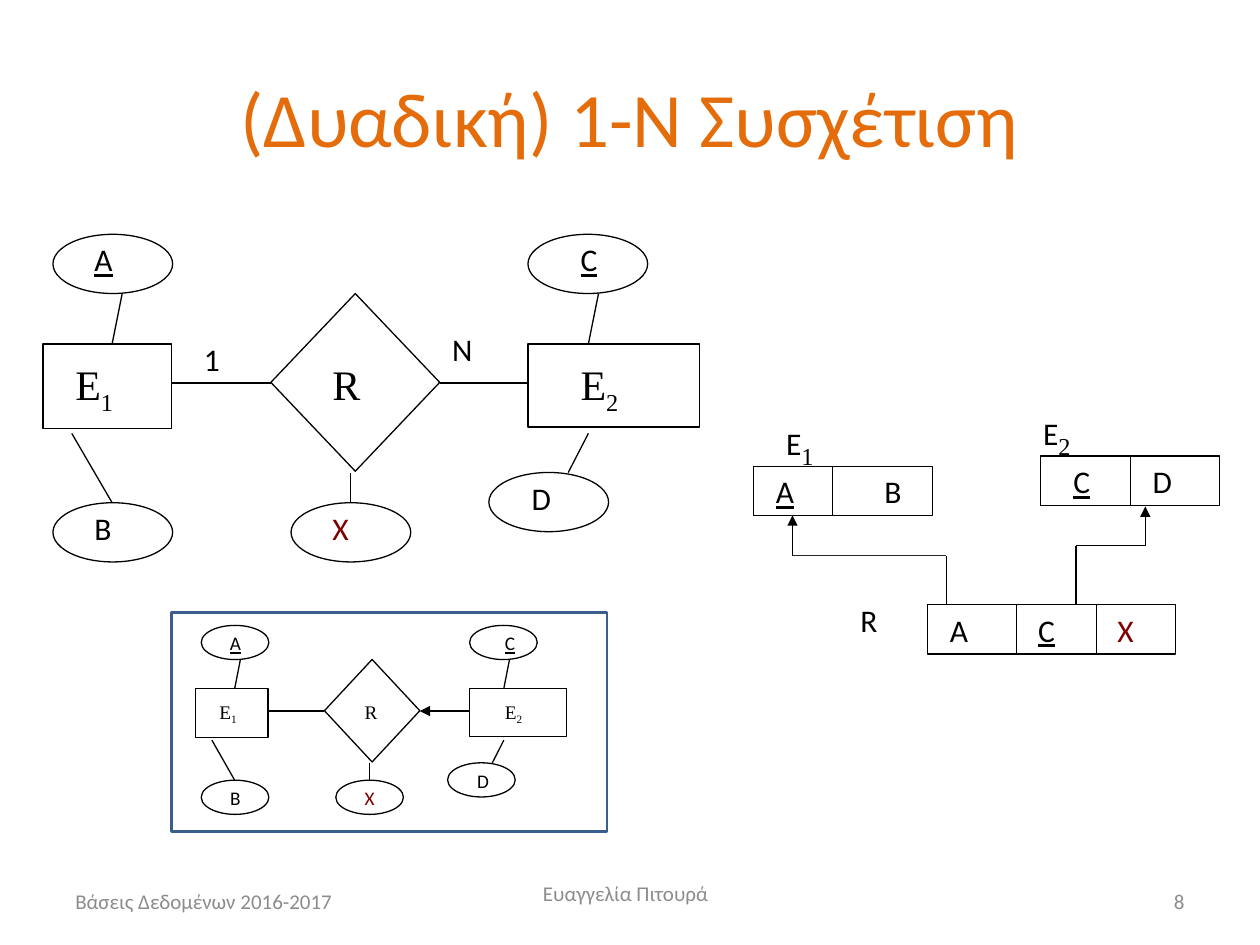
from dataclasses import dataclass
from typing import Any

from lxml.etree import SubElement
from pptx import Presentation
from pptx.dml.color import RGBColor
from pptx.enum.shapes import MSO_CONNECTOR as Link, MSO_SHAPE as Preset
from pptx.enum.text import MSO_ANCHOR as Anchor, MSO_AUTO_SIZE as AutoSize, PP_ALIGN as Align
from pptx.oxml.ns import qn
from pptx.util import Inches, Pt

COLORS = {"ink": "000000", "accent": "800000", "title": "E46C0A",
          "footer": "8C8C8C", "frame": "3A5F8C", "elbow": "262626"}
SANS, SERIF = "Calibri", "Times New Roman"


@dataclass(frozen=True)
class Run:
    text: str
    size: float = 18
    font: str = SANS
    color: str = "ink"
    key: bool = False
    sub: bool = False


@dataclass(frozen=True)
class Box:
    x: float
    y: float
    w: float
    h: float


@dataclass(frozen=True)
class Attribute:
    name: str
    x: float
    y: float
    name_dx: float
    name_w: float
    color: str = "ink"
    key: bool = False


@dataclass(frozen=True)
class Node:
    preset: Any
    box: Box
    name: str
    index: str
    name_x: float
    name_w: float


@dataclass(frozen=True)
class View:
    dx: float
    dy: float
    sx: float
    sy: float
    node_size: float
    attribute_size: float
    node_h: float
    attribute_h: float
    arrow: bool

    def point(self, x: float, y: float) -> tuple[float, float]:
        return self.dx + self.sx * x, self.dy + self.sy * y

    def box(self, box: Box) -> Box:
        return Box(*self.point(box.x, box.y), box.w * self.sx, box.h * self.sy)


@dataclass(frozen=True)
class Cell:
    name: str
    x: float
    w: float
    color: str = "ink"
    key: bool = False


@dataclass(frozen=True)
class Relation:
    box: Box
    heading: tuple[Run, ...]
    heading_x: float
    heading_y: float
    dividers: tuple[float, ...]
    cells: tuple[Cell, ...]


NODES = [
    Node(Preset.FLOWCHART_PROCESS, Box(4.19, 2.73, 1.36, 0.66), "E", "2", 4.51, 1.1),
    Node(Preset.FLOWCHART_DECISION, Box(2.15, 2.33, 1.34, 1.41), "R", "", 2.54, 1.42),
    Node(Preset.FLOWCHART_PROCESS, Box(0.34, 2.73, 1.02, 0.67), "E", "1", 0.5, 0.94),
]
ATTRIBUTES = [
    Attribute("A", 0.42, 1.86, 0.23, 0.79, key=True),
    Attribute("B", 0.42, 3.99, 0.23, 0.55),
    Attribute("C", 4.19, 1.86, 0.32, 0.71, key=True),
    Attribute("D", 3.88, 3.75, 0.24, 0.71),
    Attribute("X", 2.31, 3.99, 0.23, 0.63, "accent"),
]
ATTRIBUTE_LINKS = [
    (0.97, 2.33, 0.89, 2.73), (0.57, 3.44, 0.89, 3.99), (4.75, 2.33, 4.67, 2.73),
    (4.67, 3.44, 4.51, 3.75), (2.78, 3.75, 2.78, 3.99),
]
LARGE = View(0, 0, 1, 1, 24, 18, 0.5, 0.4, False)
SMALL = View(1.36, 3.89, 0.565, 0.577, 11, 11, 0.29, 0.29, True)
RELATIONS = [
    Relation(Box(5.98, 3.7, 1.42, 0.39), (Run("E"), Run("1", 24, SERIF, sub=True)),
             6.14, 3.23, (6.61,), (Cell("A", 6.06, 0.55, key=True), Cell("B", 6.92, 0.71))),
    Relation(Box(8.26, 3.62, 1.42, 0.39), (Run("E"), Run("2", 24, SERIF, sub=True)),
             8.18, 3.15, (8.97,), (Cell("C", 8.42, 0.55, key=True), Cell("D", 9.05, 0.71))),
    Relation(Box(7.36, 4.8, 1.97, 0.39), (Run("R"),), 6.73, 4.72, (8.07, 8.7),
             (Cell("A", 7.44, 0.55), Cell("C", 8.14, 0.71, key=True),
              Cell("X", 8.77, 0.47, "accent"))),
]
REFERENCES = [
    [(7.51, 4.8), (7.51, 4.41), (6.29, 4.41), (6.29, 4.09)],
    [(8.54, 4.8), (8.54, 4.33), (9.09, 4.33), (9.09, 4.02)],
]
FOOTERS = [
    (Box(0.5, 6.95, 2.33, 0.4), "Βάσεις Δεδομένων 2016-2017", Align.LEFT),
    (Box(3.35, 6.98, 3.23, 0.22), "Ευαγγελία Πιτουρά", Align.CENTER),
    (Box(7.17, 6.95, 2.33, 0.4), "8", Align.RIGHT),
]


def rgb(name: str) -> RGBColor:
    return RGBColor.from_string(COLORS[name])


def lengths(box: Box) -> list[Inches]:
    return [Inches(side) for side in (box.x, box.y, box.w, box.h)]


def add_run(paragraph: Any, run: Run) -> None:
    part = paragraph.add_run()
    part.text = run.text
    part.font.size, part.font.name = Pt(run.size), run.font
    part.font.color.rgb = rgb(run.color)
    if run.key:
        part.font.underline = True
    if run.sub:
        part.font._element.set("baseline", "-25000")


def add_label(shapes: Any, box: Box, *runs: Run) -> Any:
    frame = shapes.add_textbox(*lengths(box)).text_frame
    frame.word_wrap = True
    frame.auto_size = AutoSize.SHAPE_TO_FIT_TEXT
    for run in runs:
        add_run(frame.paragraphs[0], run)
    return frame


def add_outline(shapes: Any, preset: Any, box: Box, color: str = "ink", width: float = 0.75) -> None:
    outline = shapes.add_shape(preset, *lengths(box))
    outline.shadow.inherit = False
    outline.fill.background()
    outline.line.color.rgb, outline.line.width = rgb(color), Pt(width)


def add_link(shapes: Any, start: tuple, end: tuple, arrow: bool = False, color: str = "ink") -> None:
    link = shapes.add_connector(Link.STRAIGHT, *[Inches(v) for v in (*start, *end)])
    link.line.color.rgb, link.line.width = rgb(color), Pt(0.75)
    if arrow:
        SubElement(link.line._get_or_add_ln(), qn("a:tailEnd"), type="triangle")
    SubElement(link._element.spPr, qn("a:effectLst"))


def draw_diagram(shapes: Any, view: View) -> None:
    for node in NODES:
        add_outline(shapes, node.preset, view.box(node.box))
        runs = [Run(node.name, view.node_size, SERIF)]
        if node.index:
            runs.append(Run(node.index, view.node_size, SERIF, sub=True))
        add_label(shapes, Box(*view.point(node.name_x, 2.8), node.name_w * view.sx, view.node_h), *runs)
    add_link(shapes, view.point(1.36, 3.04), view.point(2.15, 3.04))
    add_link(shapes, view.point(4.19, 3.04), view.point(3.49, 3.04), view.arrow)
    for item in ATTRIBUTES:
        add_outline(shapes, Preset.OVAL, view.box(Box(item.x, item.y, 0.95, 0.47)))
        place = Box(*view.point(item.x + item.name_dx, item.y), item.name_w * view.sx, view.attribute_h)
        add_label(shapes, place, Run(item.name, view.attribute_size, color=item.color, key=item.key))
    for x1, y1, x2, y2 in ATTRIBUTE_LINKS:
        add_link(shapes, view.point(x1, y1), view.point(x2, y2))


def draw_relation(shapes: Any, relation: Relation) -> None:
    box = relation.box
    add_outline(shapes, Preset.RECTANGLE, box)
    for x in relation.dividers:
        add_link(shapes, (x, box.y), (x, box.y + box.h))
    for cell in relation.cells:
        add_label(shapes, Box(cell.x, box.y, cell.w, 0.4), Run(cell.name, color=cell.color, key=cell.key))
    add_label(shapes, Box(relation.heading_x, relation.heading_y, 1.1, 0.4), *relation.heading)


def main() -> None:
    """Build the slide on mapping a binary 1-N relationship to relations."""
    deck = Presentation()
    deck.slide_width, deck.slide_height = Inches(10), Inches(7.5)
    slide = deck.slides.add_slide(deck.slide_layouts[5])
    shapes, title = slide.shapes, slide.shapes.title
    title.left, title.top, title.width, title.height = lengths(Box(0.5, 0.3, 9, 1.25))
    title.text_frame.vertical_anchor = Anchor.MIDDLE
    title.text_frame.paragraphs[0].alignment = Align.CENTER
    add_run(title.text_frame.paragraphs[0], Run("(Δυαδική) 1-Ν Συσχέτιση", 44, color="title"))

    large = shapes.add_group_shape().shapes
    draw_diagram(large, LARGE)
    add_label(large, Box(1.52, 2.65, 0.63, 0.4), Run("1"))
    add_label(large, Box(3.49, 2.57, 0.47, 0.4), Run("N"))
    for relation in RELATIONS:
        draw_relation(shapes, relation)
    for (start, rise, turn, target), color in zip(REFERENCES, ("elbow", "ink")):
        add_link(shapes, start, rise)
        add_link(shapes, rise, turn, color=color)
        add_link(shapes, turn, target, arrow=True)
    small = shapes.add_group_shape().shapes
    draw_diagram(small, SMALL)
    add_outline(small, Preset.RECTANGLE, Box(1.36, 4.86, 3.46, 1.74), "frame", 1.5)

    for box, text, alignment in FOOTERS:
        frame = add_label(shapes, box, Run(text, 12, color="footer"))
        frame.auto_size = AutoSize.NONE
        frame.vertical_anchor = Anchor.MIDDLE
        frame.paragraphs[0].alignment = alignment
    deck.save("out.pptx")


if __name__ == "__main__":
    main()
